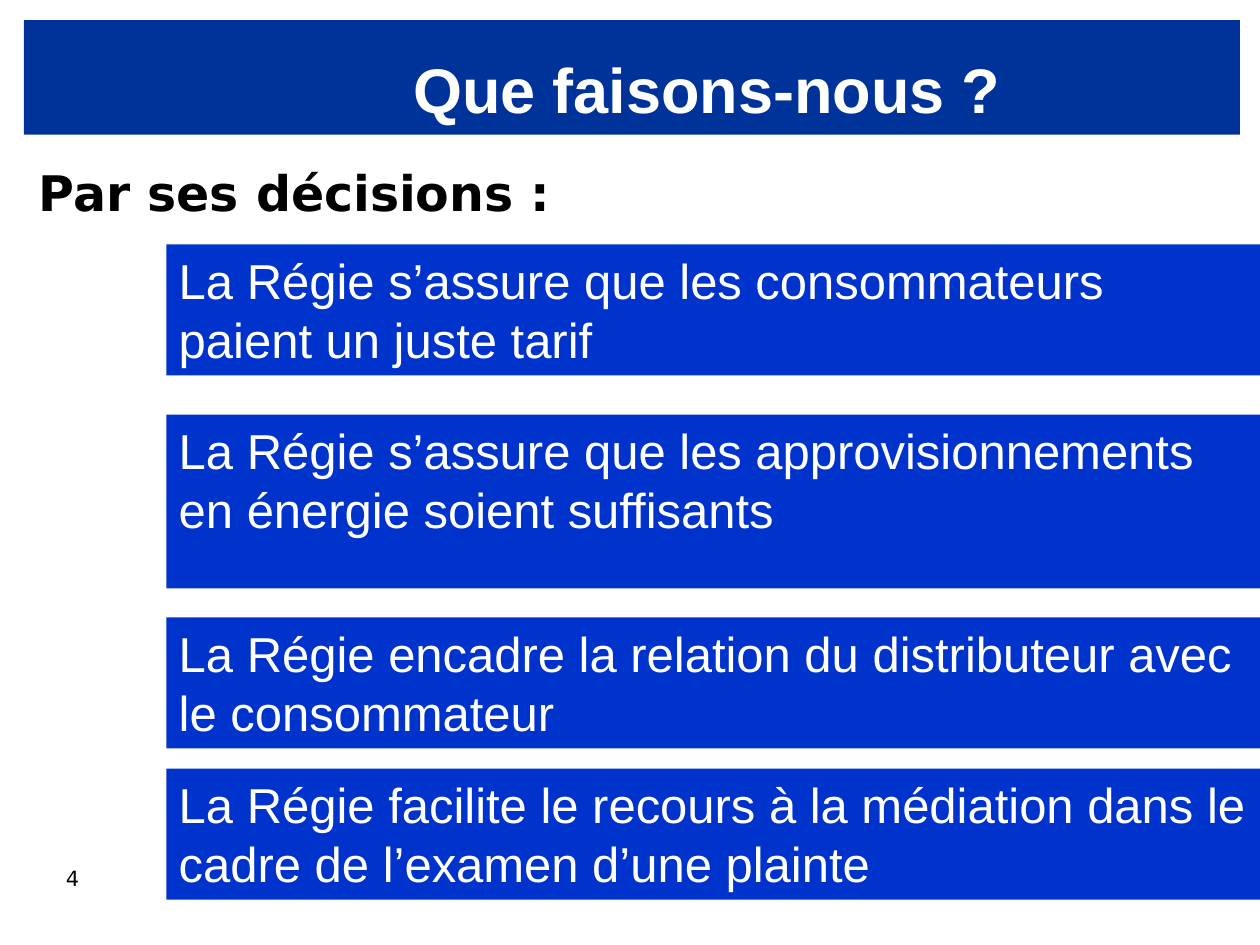
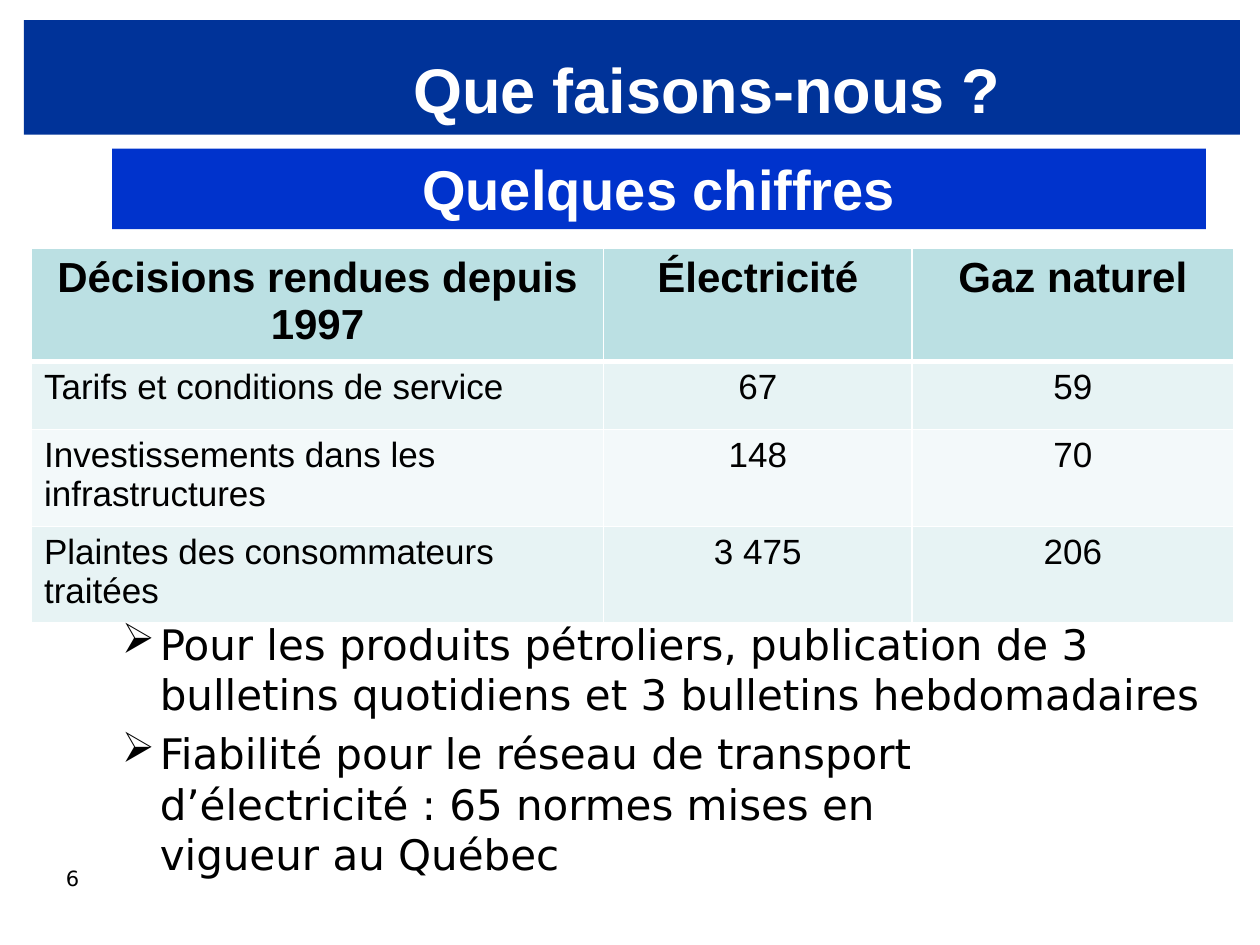
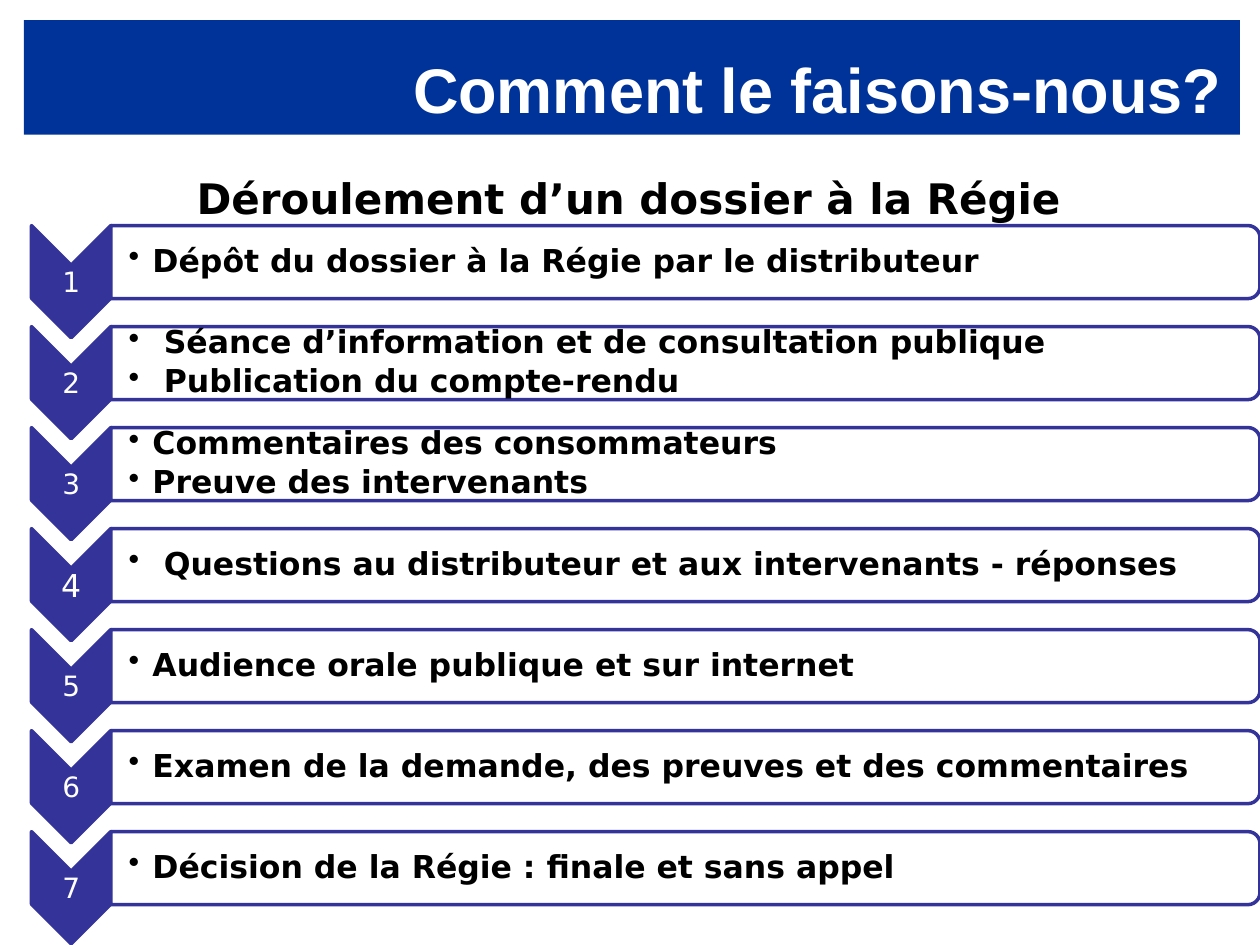
import dataclasses
import lxml.etree
import pptx
import pptx.dml.color
import pptx.enum.shapes
import pptx.enum.text
import pptx.oxml.ns
import pptx.util

Inches = pptx.util.Inches
Shape = pptx.enum.shapes.MSO_SHAPE
Align = pptx.enum.text.PP_ALIGN
Anchor = pptx.enum.text.MSO_ANCHOR
qn = pptx.oxml.ns.qn


@dataclasses.dataclass(frozen=True)
class Theme:
    # Colours
    navy: str = "003399"
    blue: str = "0033CC"
    indigo: str = "333399"
    white: str = "FFFFFF"
    black: str = "000000"
    teal: str = "BBE0E3"
    pale: str = "E7F3F4"
    faint: str = "F3F9FA"
    # Fonts
    sans: str = "Arial"
    body: str = "DejaVu Sans"
    # Type sizes
    title: int = 36
    banner: int = 32
    large: int = 28
    medium: int = 24
    cell: int = 20
    step: int = 18
    digit: int = 16
    page: int = 12


T = Theme()


def rgb(code):
    return pptx.dml.color.RGBColor.from_string(code)


def style(para, size, color=T.black, font=T.body, bold=False, align=Align.LEFT):
    para.alignment = align
    for run in para.runs:
        run.font.size = pptx.util.Pt(size)
        run.font.name = font
        run.font.bold = bold
        run.font.color.rgb = rgb(color)


def write(frame, lines, size, anchor=Anchor.TOP, **look):
    frame.word_wrap = True
    frame.vertical_anchor = anchor
    for i, line in enumerate(lines):
        para = frame.paragraphs[0] if i == 0 else frame.add_paragraph()
        para.text = line
        style(para, size, **look)


def label(slide, box, lines, size, inset=None, **look):
    frame = slide.shapes.add_textbox(*map(Inches, box)).text_frame
    if inset:
        (frame.margin_left, frame.margin_top,
         frame.margin_right, frame.margin_bottom) = map(Inches, inset)
    write(frame, lines, size, **look)
    return frame


def block(slide, kind, box, fill, line=None):
    shape = slide.shapes.add_shape(kind, *map(Inches, box))
    shape.shadow.inherit = False
    shape.fill.solid()
    shape.fill.fore_color.rgb = rgb(fill)
    if line:
        shape.line.color.rgb = rgb(line)
        shape.line.width = pptx.util.Pt(2)
    else:
        shape.line.fill.background()
    return shape


def panel(slide, box, text, size, **look):
    shape = block(slide, Shape.RECTANGLE, box, T.blue)
    write(shape.text_frame, [text], size, color=T.white, font=T.sans, **look)


def upright(slide, kind, box, fill):
    """Fill the box with a shape turned a quarter clockwise."""
    left, top, width, height = box
    shift = (width - height) / 2
    shape = block(slide, kind, (left + shift, top - shift, height, width),
                  fill, T.indigo)
    shape.rotation = 90


def bullet(para, mark, indent):
    props = para._p.get_or_add_pPr()
    props.set("marL", str(Inches(indent)))
    props.set("indent", str(-Inches(indent)))
    lxml.etree.SubElement(props, qn("a:buChar")).set("char", mark)


def frame_slide(deck, title, page=None, width=5.71):
    slide = deck.slides.add_slide(deck.slide_layouts[6])
    # Title band
    block(slide, Shape.RECTANGLE, (0.19, 0.16, 9.65, 0.91), T.navy)
    label(slide, (3.18, 0.21, width, 0.98), [title], T.title,
          anchor=Anchor.MIDDLE, color=T.white, font=T.sans, bold=True)
    # Page number
    if page:
        label(slide, (0.19, 6.82, 0.77, 0.52), [page], T.page, align=Align.CENTER)
    return slide


def border(cell, sides):
    props = cell._tc.get_or_add_tcPr()
    for side, width in zip("LRTB", sides):
        line = lxml.etree.SubElement(props, qn("a:ln" + side))
        line.set("w", str(pptx.util.Pt(width)))
        fill = lxml.etree.SubElement(line, qn("a:solidFill"))
        lxml.etree.SubElement(fill, qn("a:srgbClr")).set("val", T.white)


def grid(slide, box, rows, widths, heights):
    table = slide.shapes.add_table(len(rows), len(widths),
                                   *map(Inches, box)).table
    for col, width in zip(table.columns, widths):
        col.width = Inches(width)
    for r, row in enumerate(rows):
        table.rows[r].height = Inches(heights[r])
        head = r == 0
        fill = T.teal if head else (T.faint, T.pale)[r % 2]
        for c, text in enumerate(row):
            cell = table.cell(r, c)
            border(cell, (1, 1, 3 if r == 1 else 1, 3 if head else 1))
            cell.fill.solid()
            cell.fill.fore_color.rgb = rgb(fill)
            cell.text_frame.text = text
            style(cell.text_frame.paragraphs[0], T.medium if head else T.cell,
                  font=T.sans, bold=head,
                  align=Align.CENTER if head or c else Align.LEFT)


def step(slide, box, digit, lines, size, indent):
    left, top, width, height = box
    arrow = 0.63
    # Numbered chevron
    upright(slide, Shape.CHEVRON, (left, top, arrow, 0.89), T.indigo)
    label(slide, (left, top + 0.31, arrow, 0.27), [digit], size,
          inset=[0.01] * 4, anchor=Anchor.MIDDLE, color=T.white,
          align=Align.CENTER)
    # Step text
    area = (left + arrow, top, width - arrow, height)
    upright(slide, Shape.ROUND_2_SAME_RECTANGLE, area, T.white)
    frame = label(slide, area, lines, T.step, inset=(0.14, 0.01, 0.01, 0.01),
                  anchor=Anchor.MIDDLE, bold=True)
    for para in frame.paragraphs:
        para.line_spacing = 0.9
        para.space_after = pptx.util.Pt(2.7)
        bullet(para, "•", indent)


def rulings(deck):
    slide = frame_slide(deck, "Que faisons-nous ?", "4")
    label(slide, (0.21, 1.24, 9.58, 0.6), ["Par ses décisions :"], T.large, bold=True)
    for top, height, text in (
        (1.94, 1.04, "La Régie s’assure que les consommateurs paient un juste tarif"),
        (3.29, 1.38, "La Régie s’assure que les approvisionnements en énergie soient suffisants"),
        (4.9, 1.04, "La Régie encadre la relation du distributeur avec le consommateur"),
        (6.1, 1.04, "La Régie facilite le recours à la médiation dans le cadre de l’examen d’une plainte"),
    ):
        panel(slide, (1.32, top, 8.68, height), text, T.large)


def figures(deck):
    slide = frame_slide(deck, "Que faisons-nous ?", "6")
    panel(slide, (0.89, 1.18, 8.68, 0.64), "Quelques chiffres", T.banner,
          bold=True, align=Align.CENTER)
    # Rulings by sector
    grid(slide, (0.25, 1.97, 9.54, 2.55), (
        ("Décisions rendues depuis 1997", "Électricité", "Gaz naturel"),
        ("Tarifs et conditions de service", "67", "59"),
        ("Investissements dans les infrastructures", "148", "70"),
        ("Plaintes des consommateurs traitées", "3 475", "206"),
    ), (4.54, 2.45, 2.55), (0.67, 0.54, 0.67, 0.67))
    # Other duties
    frame = label(slide, (0.87, 4.86, 9.13, 2.15), (
        "Pour les produits pétroliers, publication de 3 bulletins quotidiens et 3 bulletins hebdomadaires",
        "Fiabilité pour le réseau de transport\nd’électricité : 65 normes mises en\nvigueur au Québec",
    ), T.medium)
    frame.paragraphs[1].space_before = pptx.util.Pt(4.8)
    for para in frame.paragraphs:
        bullet(para, "➢", 0.3)


def process(deck):
    slide = frame_slide(deck, "Comment le faisons-nous?", width=6.82)
    label(slide, (0.2, 1.32, 9.58, 0.5), ["Déroulement d’un dossier à la Régie"],
          T.medium, bold=True, align=Align.CENTER)
    near, wide = 0.19, 0.28
    steps = (
        (near, ["Dépôt du dossier à la Régie par le distributeur"]),
        (wide, ["Séance d’information et de consultation publique",
                "Publication du compte-rendu"]),
        (near, ["Commentaires des consommateurs", "Preuve des intervenants"]),
        (wide, ["Questions au distributeur et aux intervenants - réponses"]),
        (near, ["Audience orale publique et sur internet"]),
        (near, ["Examen de la demande, des preuves et des commentaires"]),
        (near, ["Décision de la Régie : finale et sans appel"]),
    )
    first, last = 1.79, 6.6
    pitch = (last - first) / (len(steps) - 1)
    for i, (indent, lines) in enumerate(steps):
        size = T.step if i == 3 else T.digit
        step(slide, (0.25, first + i * pitch, 9.75, 0.58), str(i + 1),
             lines, size, indent)


def main():
    deck = pptx.Presentation()
    deck.slide_width, deck.slide_height = Inches(10), Inches(7.5)
    for build in (rulings, figures, process):
        build(deck)
    deck.save("out.pptx")


if __name__ == "__main__":
    main()
